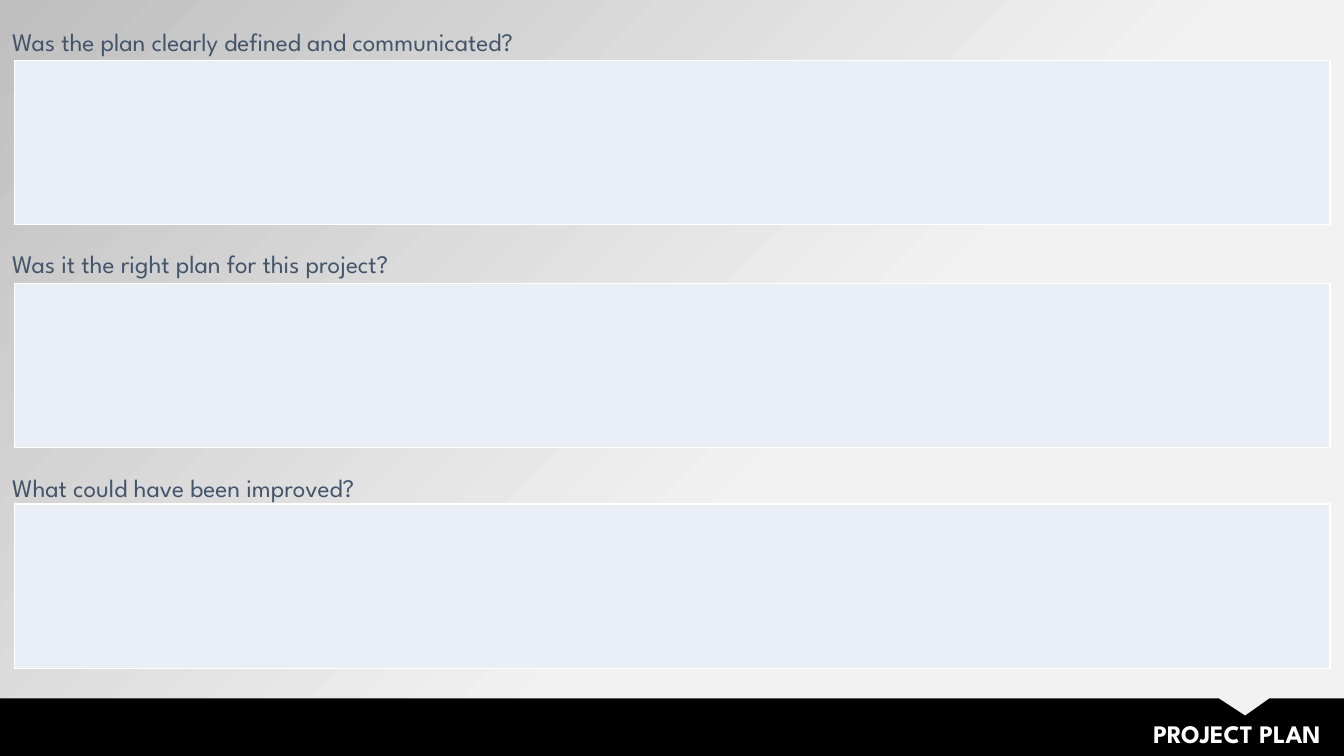
from pptx import Presentation
from pptx.dml.color import RGBColor
from pptx.enum.text import MSO_ANCHOR, MSO_AUTO_SIZE, PP_ALIGN
from pptx.oxml import parse_xml
from pptx.oxml.ns import nsdecls
from pptx.util import Inches, Pt

COLORS = {
    "light": "F2F2F2", "gray": "BFBFBF", "bar": "000000",
    "white": "FFFFFF", "box": "EAEFF7", "label": "44546A",
}
FONT = "League Spartan"
# Question, label top, label height, line spacing, box top
ITEMS = [
    ("Was the plan clearly defined and communicated?", 0.2, 0.41, Pt(21.5), 0.6),
    ("Was it the right plan for this project?", 2.41, 0.41, Pt(21.5), 2.81),
    ("What could have been improved?", 4.57, 0.45, 1.2, 5),
]


def color(name):
    return RGBColor.from_string(COLORS[name])


def place(shape, left, top, width, height):
    shape.left, shape.top = Inches(left), Inches(top)
    shape.width, shape.height = Inches(width), Inches(height)


def write(para, text, shade, bold=False):
    run = para.add_run()
    run.text = text
    font = run.font
    font.name, font.size, font.bold = FONT, Pt(18), bold
    font.color.rgb = color(shade)


def set_margins(frame, side, end):
    frame.margin_left = frame.margin_right = Inches(side)
    frame.margin_top = frame.margin_bottom = Inches(end)


def paint_back(slide):
    fill = slide.background.fill
    fill.gradient()
    fill.gradient_angle = 135
    for stop, shade, pos in zip(fill.gradient_stops, ("light", "gray"), (0.4, 1)):
        stop.color.rgb = color(shade)
        stop.position = pos


def add_bar(slide):
    """Draw the footer band with a notch above the title."""
    points = [(12.09, 6.93), (12.35, 7.1), (12.59, 6.93),
              (13.33, 6.93), (13.33, 7.5), (0, 7.5)]
    pen = slide.shapes.build_freeform(0, Inches(6.93))
    pen.add_line_segments([(Inches(x), Inches(y)) for x, y in points], close=True)
    bar = pen.convert_to_shape()
    bar.shadow.inherit = False
    bar.fill.solid()
    bar.fill.fore_color.rgb = color("bar")
    bar.line.fill.background()
    return bar


def set_title(slide, bar, text):
    title = slide.shapes.title
    place(title, 4.14, 7.08, 9.06, 0.4)
    frame = title.text_frame
    frame.word_wrap = True
    frame.auto_size = MSO_AUTO_SIZE.SHAPE_TO_FIT_TEXT
    frame.vertical_anchor = MSO_ANCHOR.TOP
    set_margins(frame, 0.1, 0.05)
    para = frame.paragraphs[0]
    para.alignment = PP_ALIGN.RIGHT
    write(para, text, "white", bold=True)
    bar._element.addnext(title._element)  # title in front of the bar


def add_box(slide, top):
    """Add a one-cell table as an empty answer box."""
    table = slide.shapes.add_table(
        1, 1, Inches(0.14), Inches(top), Inches(13.05), Inches(1.63)).table
    table.first_row = table.horz_banding = False
    cell = table.cell(0, 0)
    cell.fill.solid()
    cell.fill.fore_color.rgb = color("box")
    props = cell._tc.get_or_add_tcPr()
    for i, side in enumerate(("lnL", "lnR", "lnT", "lnB")):
        props.insert(i, parse_xml(
            f'<a:{side} {nsdecls("a")} w="{Pt(1)}"><a:solidFill>'
            f'<a:srgbClr val="{COLORS["white"]}"/></a:solidFill></a:{side}>'))


def add_label(slide, text, top, height, space):
    label = slide.shapes.add_textbox(0, Inches(top), Inches(7.63), Inches(height))
    frame = label.text_frame
    frame.word_wrap = True
    frame.auto_size = MSO_AUTO_SIZE.SHAPE_TO_FIT_TEXT
    set_margins(frame, 0.12, 0.06)
    para = frame.paragraphs[0]
    para.line_spacing = space
    para.space_before = Pt(3.6)
    write(para, text, "label")


def main():
    deck = Presentation()
    deck.slide_width, deck.slide_height = Inches(13.33), Inches(7.5)
    slide = deck.slides.add_slide(deck.slide_layouts[5])
    paint_back(slide)
    set_title(slide, add_bar(slide), "PROJECT PLAN")
    for text, top, height, space, box_top in ITEMS:
        add_box(slide, box_top)
        add_label(slide, text, top, height, space)
    deck.save("out.pptx")


if __name__ == "__main__":
    main()
